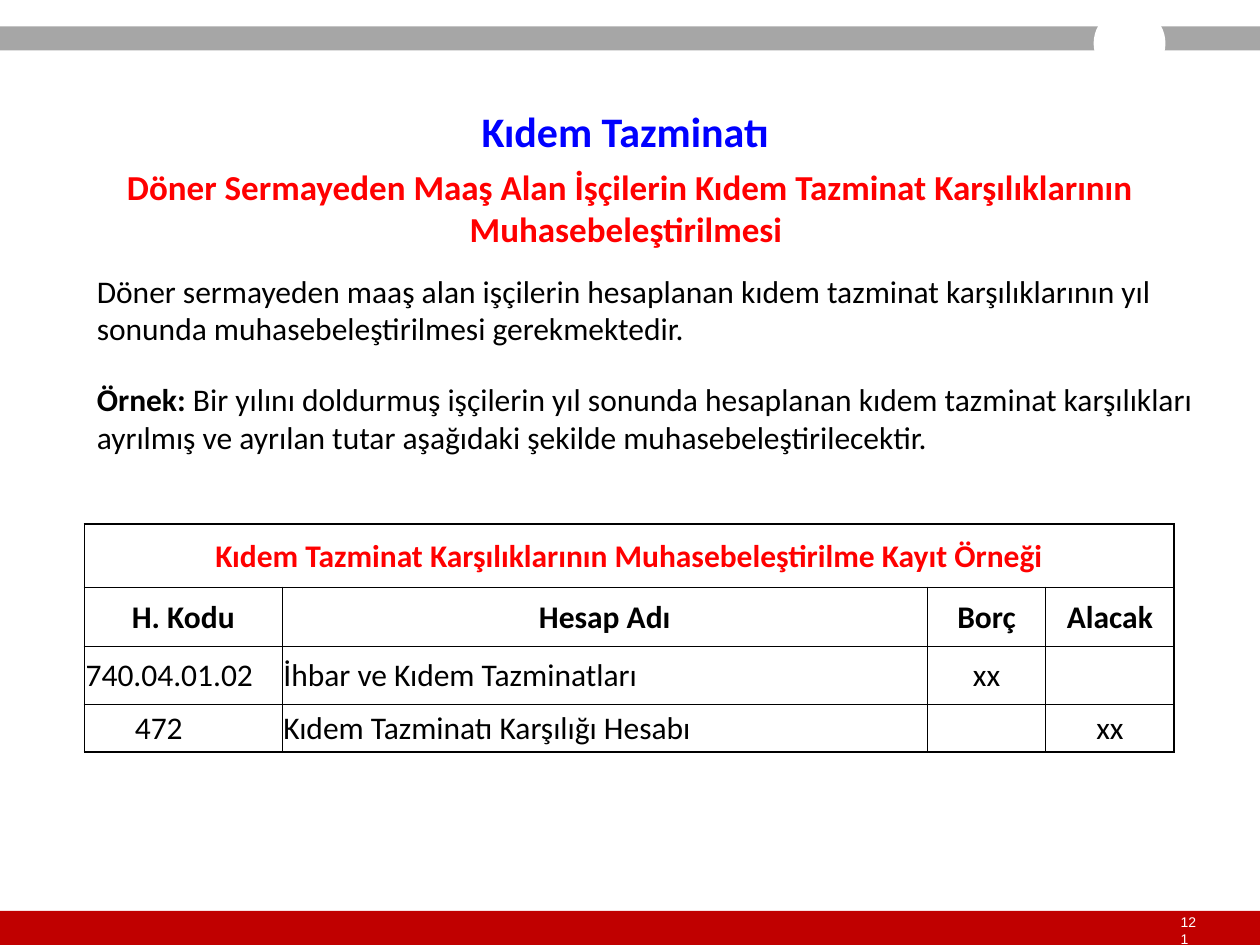
"""Builds the severance pay slide with its bookkeeping entry table."""
from lxml import etree
from pptx import Presentation, util as u
from pptx.dml.color import RGBColor
from pptx.enum import shapes, text
from pptx.oxml.ns import qn

COLORS = {"red": "FF0000", "blue": "0000FF", "black": "000000", "white": "FFFFFF",
          "footer": "C00000", "header": "A6A6A6"}
CENTER, LEFT = text.PP_ALIGN.CENTER, text.PP_ALIGN.LEFT

deck = Presentation()
deck.slide_width, deck.slide_height = u.Inches(10), u.Inches(7.5)
slide = deck.slides.add_slide(deck.slide_layouts[6])
col, row = deck.slide_width / 100, deck.slide_height / 75


def grid(left, top, width, height):
    return [round(n * step) for n, step in zip((left, top, width, height), (col, row) * 2)]


def write(frame, runs, size, color, align=LEFT, name="Calibri"):
    line = frame.paragraphs[0]
    line.alignment = align
    for words, bold in runs:
        run = line.add_run()
        run.text = words
        run.font.color.rgb = RGBColor.from_string(COLORS[color])
        for key, value in {"size": u.Pt(size), "name": name, "bold": bold}.items():
            setattr(run.font, key, value)


bands = [("RECTANGLE", (0, 72.3, 100, 2.7), "footer"),
         ("RECTANGLE", (0, 2.1, 100, 1.9), "header"),
         ("OVAL", (86.8, 0.6, 5.7, 5.7), "white")]
for outline, place, color in bands:
    band = slide.shapes.add_shape(shapes.MSO_SHAPE[outline], *grid(*place))
    band.shadow.inherit = False
    band.fill.solid()
    band.fill.fore_color.rgb = RGBColor.from_string(COLORS[color])
    band.line.fill.background()

page_number = slide.shapes.add_textbox(*grid(93.7, 73.2, 1.4, 1.3)).text_frame
page_format = {"margin_left": 0, "margin_right": 0, "margin_top": 0, "margin_bottom": 0,
               "word_wrap": True, "vertical_anchor": text.MSO_ANCHOR.MIDDLE}
for key, value in page_format.items():
    setattr(page_number, key, value)
write(page_number, [("121", False)], 8, "white", name="Arial")

passages = [
    ((0, 8.4, 100, 3.9), [("Kıdem Tazminatı ", True)], 24, "blue", CENTER),
    ((0, 12.6, 100, 7.7),
     [("Döner Sermayeden Maaş Alan İşçilerin Kıdem Tazminat Karşılıklarının "
       "Muhasebeleştirilmesi ", True)], 20, "red", CENTER),
    ((6.7, 21, 93.3, 7.1),
     [("Döner sermayeden maaş alan işçilerin hesaplanan kıdem tazminat karşılıklarının yıl "
       "sonunda muhasebeleştirilmesi gerekmektedir.", False)], 18, "black", LEFT),
    ((6.7, 29.6, 93.3, 7.1),
     [("Örnek: ", True),
      ("Bir yılını doldurmuş işçilerin yıl sonunda hesaplanan kıdem tazminat karşılıkları "
       "ayrılmış ve ayrılan tutar aşağıdaki şekilde muhasebeleştirilecektir.", False)],
     18, "black", LEFT),
]
for place, runs, size, color, align in passages:
    passage = slide.shapes.add_textbox(*grid(*place)).text_frame
    passage.word_wrap = True
    passage.vertical_anchor = text.MSO_ANCHOR.MIDDLE
    write(passage, runs, size, color, align)

records = [
    ["Kıdem Tazminat Karşılıklarının Muhasebeleştirilme Kayıt Örneği", "", "", ""],
    ["H. Kodu", "Hesap Adı", "Borç", "Alacak"],
    ["740.04.01.02", "İhbar ve Kıdem Tazminatları", "xx", ""],
    ["472", "Kıdem Tazminatı Karşılığı Hesabı", "", "xx"],
]
widths, heights = [15.7, 51.2, 9.4, 10.2], [5, 4.7, 4.6, 3.8]
last_row, last_col = len(heights) - 1, len(widths) - 1
entry = slide.shapes.add_table(len(heights), len(widths),
                               *grid(6.7, 41.6, sum(widths), sum(heights))).table
entry.first_row = entry.horz_banding = False
for column, width in zip(entry.columns, widths):
    column.width = round(width * col)
for line, height in zip(entry.rows, heights):
    line.height = round(height * row)
entry.cell(0, 0).merge(entry.cell(0, last_col))

for r, record in enumerate(records):
    for c, words in enumerate(record):
        cell = entry.cell(r, c)
        indent = 4 if words == "472" else 0.1
        cell_format = {"margin_left": round(indent * col), "margin_right": round(0.1 * col),
                       "margin_top": round(0.1 * row), "margin_bottom": 0,
                       "vertical_anchor": text.MSO_ANCHOR.MIDDLE}
        for key, value in cell_format.items():
            setattr(cell, key, value)
        if words:
            write(cell.text_frame, [(words, r < 2)], 18, "black" if r else "red",
                  CENTER if r < 2 or c > 1 else LEFT)
        outer = {"lnL": c == 0, "lnR": c == last_col or r == 0,
                 "lnT": r == 0, "lnB": r == last_row}
        for side, is_outer in outer.items():
            border = etree.SubElement(cell._tc.get_or_add_tcPr(), qn(f"a:{side}"),
                                      w=str(u.Pt(1 if is_outer else 0.5)))
            paint = etree.SubElement(border, qn("a:solidFill"))
            etree.SubElement(paint, qn("a:srgbClr"), val=COLORS["black"])
        cell.fill.solid()
        cell.fill.fore_color.rgb = RGBColor.from_string(COLORS["white"])

deck.save("out.pptx")
